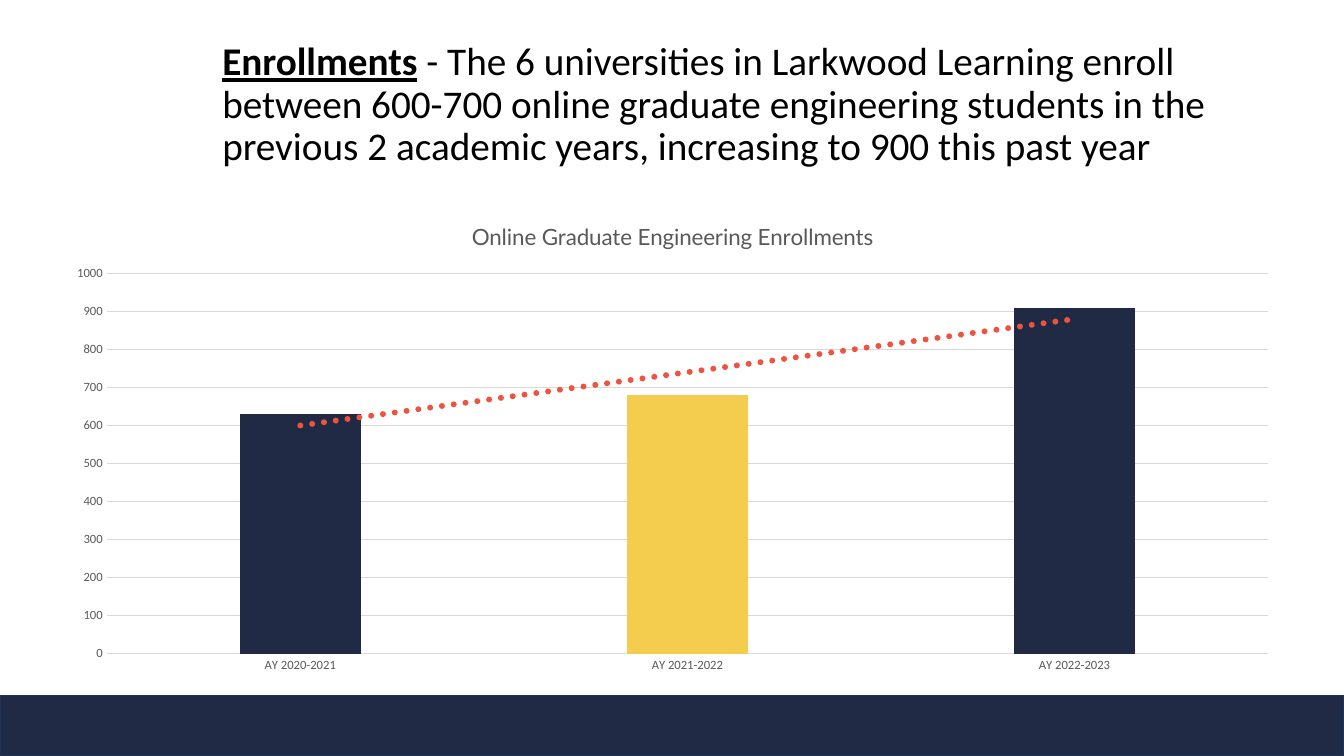
from pptx import Presentation, util as u
from pptx.chart.data import CategoryChartData
from pptx.dml.color import RGBColor
from pptx.enum import chart as ch, shapes, text
from pptx.oxml import parse_xml
from pptx.oxml.ns import nsdecls, qn

WIDE, HIGH = 13.33, 7.5
NAVY, GOLD, RED = "202A44", "F4CD4E", "EE5340"
EDGE, GREY, RULE, INK = "1E3256", "595959", "D9D9D9", "000000"
LEAD = "Enrollments"
REST = (" - The 6 universities in Larkwood Learning enroll between 600-700 online "
        "graduate engineering students in the previous 2 academic years, "
        "increasing to 900 this past year")
CAPTION = "Online Graduate Engineering Enrollments"
YEARS = [("AY 2020-2021", 630, NAVY), ("AY 2021-2022", 680, GOLD),
         ("AY 2022-2023", 910, NAVY)]
BAND = (0, 0.92, 1, 0.08)  # shares of the slide: left, top, width, height
HEAD = (0.158, 0.043, 0.805, 0.193)
PLOT = (0.039, 0.267, 0.923, 0.635)


def place(share):
    return [u.Inches(part * side) for part, side in zip(share, (WIDE, HIGH) * 2)]


def tint(code):
    return RGBColor.from_string(code)


def style(font, name, size, code):
    font.name, font.size = name, u.Pt(size)
    font.color.rgb = tint(code)


def add_band(slide):
    band = slide.shapes.add_shape(shapes.MSO_SHAPE.RECTANGLE, *place(BAND))
    band.shadow.inherit = False
    band.fill.solid()
    band.fill.fore_color.rgb = tint(NAVY)
    band.line.color.rgb = tint(EDGE)
    band.line.width = u.Pt(1)


def add_head(slide):
    frame = slide.shapes.add_textbox(*place(HEAD)).text_frame
    frame.word_wrap = True
    frame.vertical_anchor = text.MSO_ANCHOR.MIDDLE
    para = frame.paragraphs[0]
    para.line_spacing = 0.9
    style(para.font, "Calibri", 28, INK)
    lead, rest = para.add_run(), para.add_run()
    lead.text, rest.text = LEAD, REST
    lead.font.bold = lead.font.underline = True


def add_trend(series):
    """Lay a dotted linear trend line over the series."""
    trend = parse_xml(
        f'<c:trendline {nsdecls("c", "a")}><c:spPr><a:ln w="{u.Pt(4.25)}" cap="rnd">'
        f'<a:solidFill><a:srgbClr val="{RED}"/></a:solidFill>'
        '<a:prstDash val="sysDot"/></a:ln></c:spPr><c:trendlineType val="linear"/>'
        '<c:dispRSqr val="0"/><c:dispEq val="0"/></c:trendline>')
    series._element.find(qn("c:cat")).addprevious(trend)


def add_plot(slide):
    data = CategoryChartData()
    data.categories = [year for year, _, _ in YEARS]
    data.add_series("Series 1", [count for _, count, _ in YEARS])
    chart = slide.shapes.add_chart(
        ch.XL_CHART_TYPE.COLUMN_CLUSTERED, *place(PLOT), data).chart
    style(chart.font, "Calibri", 10, INK)
    chart.has_legend = False
    chart.has_title = True
    title = chart.chart_title.text_frame
    title.text = CAPTION
    style(title.paragraphs[0].font, "Lato", 16, GREY)
    title.paragraphs[0].font.bold = False

    for axis in (chart.category_axis, chart.value_axis):
        axis.major_tick_mark = axis.minor_tick_mark = ch.XL_TICK_MARK.NONE
        style(axis.tick_labels.font, "Calibri", 9, GREY)
    chart.value_axis.minimum_scale = 0
    chart.value_axis.maximum_scale = 1000
    chart.value_axis.major_unit = 100
    chart.value_axis.format.line.fill.background()
    for line in (chart.category_axis.format.line,
                 chart.value_axis.major_gridlines.format.line):
        line.color.rgb = tint(RULE)
        line.width = u.Pt(0.75)

    plot = chart.plots[0]
    plot.vary_by_categories = False
    plot.gap_width, plot.overlap = 219, -27
    bars = plot.series[0]
    for spot, (_, _, code) in enumerate(YEARS):
        fill = bars.points[spot].format.fill
        fill.solid()
        fill.fore_color.rgb = tint(code)
    add_trend(bars)


def main():
    deck = Presentation()
    deck.slide_width, deck.slide_height = u.Inches(WIDE), u.Inches(HIGH)
    slide = deck.slides.add_slide(deck.slide_layouts[6])
    add_band(slide)
    add_head(slide)
    add_plot(slide)
    deck.save("out.pptx")


if __name__ == "__main__":
    main()
